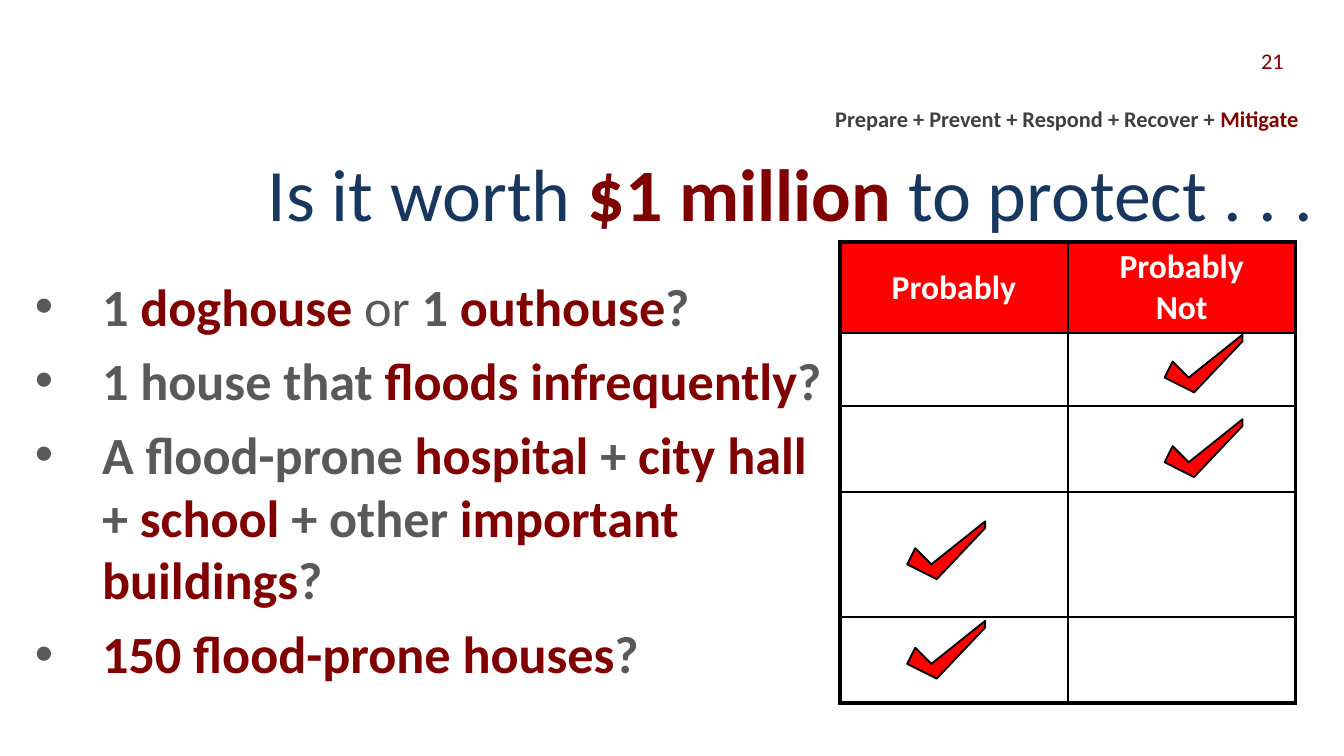
from itertools import accumulate

from lxml.etree import SubElement
from pptx import Presentation
from pptx.dml.color import RGBColor
from pptx.enum.text import MSO_ANCHOR as Anchor, MSO_AUTO_SIZE as AutoSize, PP_ALIGN as Align
from pptx.oxml.ns import qn
from pptx.util import Inches, Pt

COLORS = {"red": "FF0000", "maroon": "800000", "navy": "17375E", "gray": "595959",
          "dark": "404040", "white": "FFFFFF", "black": "000000"}
FONT = "Calibri"

# Runs are (text, color, bold)
TITLE = [("Is it worth ", "navy", False), ("$1 million ", "maroon", True),
         ("to protect . . .", "navy", False)]
TAGLINE = [("Prepare + Prevent + Respond + Recover + ", "dark", True),
           ("Mitigate", "maroon", True)]
QUESTIONS = [
    [("1 ", "gray", True), ("doghouse ", "maroon", True), ("or", "gray", False),
     (" 1 ", "gray", True), ("outhouse", "maroon", True), ("?", "gray", True)],
    [("1 house that ", "gray", True), ("floods infrequently", "maroon", True),
     ("?", "gray", True)],
    [("A flood-prone ", "gray", True), ("hospital", "maroon", True), (" + ", "gray", True),
     ("city hall", "maroon", True), (" + ", "gray", True), ("school", "maroon", True),
     (" + other ", "gray", True), ("important buildings", "maroon", True),
     ("?", "gray", True)],
    [("150 flood-prone houses", "maroon", True), ("?", "gray", True)],
]
HEADERS = ["Probably", "Probably Not"]
ROW_HEIGHTS = [0.68, 0.54, 0.64, 0.93, 0.64]
CHECK_INSETS = [0.5, 0.72]  # from the left of each column
CHECKS = [(1, 1, 0.01), (2, 1, 0.1), (3, 0, 0.22), (4, 0, 0.03)]  # row, column, drop
CHECK_POINTS = [(6, 20), (0, 32), (22, 43), (58, 5), (58, 0), (18, 32)]  # 1/100 inch


def rgb(name):
    return RGBColor.from_string(COLORS[name])


def add_runs(p, runs, size):
    for text, color, bold in runs:
        r = p.add_run()
        r.text = text
        r.font.name, r.font.size, r.font.bold = FONT, Pt(size), bold
        r.font.color.rgb = rgb(color)


def place(sp, box):
    sp.left, sp.top, sp.width, sp.height = (Inches(v) for v in box)
    tf = sp.text_frame
    tf.word_wrap = True
    tf.auto_size = AutoSize.NONE
    return tf


def fill_line(tf, runs, size, anchor):
    """Write one right-aligned line."""
    tf.vertical_anchor = anchor
    tf.paragraphs[0].alignment = Align.RIGHT
    add_runs(tf.paragraphs[0], runs, size)


def add_label(s, box, runs, size, anchor):
    sp = s.shapes.add_textbox(0, 0, 0, 0)
    fill_line(place(sp, box), runs, size, anchor)


def set_bullet(p, indent):
    pPr = p._p.get_or_add_pPr()
    pPr.set("marL", str(Inches(indent)))
    pPr.set("indent", str(-Inches(indent)))
    color = SubElement(pPr, qn("a:buClr"))
    SubElement(color, qn("a:srgbClr"), val=COLORS["gray"])
    SubElement(pPr, qn("a:buFont"), typeface="Arial")
    SubElement(pPr, qn("a:buChar"), char="•")


def fill_questions(sp, box):
    tf = place(sp, box)
    tf.vertical_anchor = Anchor.TOP
    for i, runs in enumerate(QUESTIONS):
        p = tf.add_paragraph() if i else tf.paragraphs[0]
        set_bullet(p, 0.5)
        p.space_before = Pt(6 if i else 0)
        add_runs(p, runs, 28)


def set_borders(cell, widths):
    tcPr = cell._tc.get_or_add_tcPr()
    for side, width in widths.items():
        ln = SubElement(tcPr, qn(f"a:ln{side}"), w=str(Pt(width)))
        fill = SubElement(ln, qn("a:solidFill"))
        SubElement(fill, qn("a:srgbClr"), val=COLORS["black"])


def add_check(s, x, y):
    builder = s.shapes.build_freeform(*CHECK_POINTS[0], scale=Inches(0.01))
    builder.add_line_segments(CHECK_POINTS[1:], close=True)
    check = builder.convert_to_shape(Inches(x), Inches(y))
    check.shadow.inherit = False
    check.fill.solid()
    check.fill.fore_color.rgb = rgb("red")
    check.line.color.rgb = rgb("black")
    check.line.width = Pt(1)


def add_answers(s, box):
    """Add the answer table and the check marks in its cells."""
    x, y, w, h = box
    rows, cols = len(ROW_HEIGHTS), len(HEADERS)
    table = s.shapes.add_table(rows, cols, *(Inches(v) for v in box)).table
    table.horz_banding = False
    for row, height in zip(table.rows, ROW_HEIGHTS):
        row.height = Inches(height)
    for i in range(rows):
        for j in range(cols):
            cell = table.cell(i, j)
            outer = {"L": j == 0, "R": j == cols - 1, "T": i == 0, "B": i == rows - 1}
            set_borders(cell, {side: 2.25 if edge else 1 for side, edge in outer.items()})
            if i:
                cell.fill.background()
                continue
            cell.fill.solid()
            cell.fill.fore_color.rgb = rgb("red")
            cell.vertical_anchor = Anchor.MIDDLE
            cell.margin_left = cell.margin_right = Inches(0.23)
            cell.margin_top = cell.margin_bottom = Inches(0.03)
            p = cell.text_frame.paragraphs[0]
            p.alignment = Align.CENTER
            add_runs(p, [(HEADERS[j], "white", True)], 18)

    row_tops = list(accumulate(ROW_HEIGHTS, initial=y))
    for i, j, drop in CHECKS:
        add_check(s, x + j * w / cols + CHECK_INSETS[j], row_tops[i] + drop)


def main():
    prs = Presentation()
    prs.slide_width = Inches(10)
    prs.slide_height = prs.slide_width * 9 // 16
    s = prs.slides.add_slide(prs.slide_layouts[1])
    add_label(s, (4.36, 0.73, 5.4, 0.3), TAGLINE, 12, Anchor.TOP)
    fill_line(place(s.shapes.title, (0, 1.06, 9.87, 0.74)), TITLE, 39.6, Anchor.MIDDLE)
    add_label(s, (8.04, 0.16, 1.61, 0.58), [("21", "maroon", False)], 12, Anchor.MIDDLE)
    fill_questions(s.placeholders[1], (0.16, 1.99, 6.16, 3.18))
    add_answers(s, (6.25, 1.8, 3.39, sum(ROW_HEIGHTS)))
    prs.save("out.pptx")


if __name__ == "__main__":
    main()
